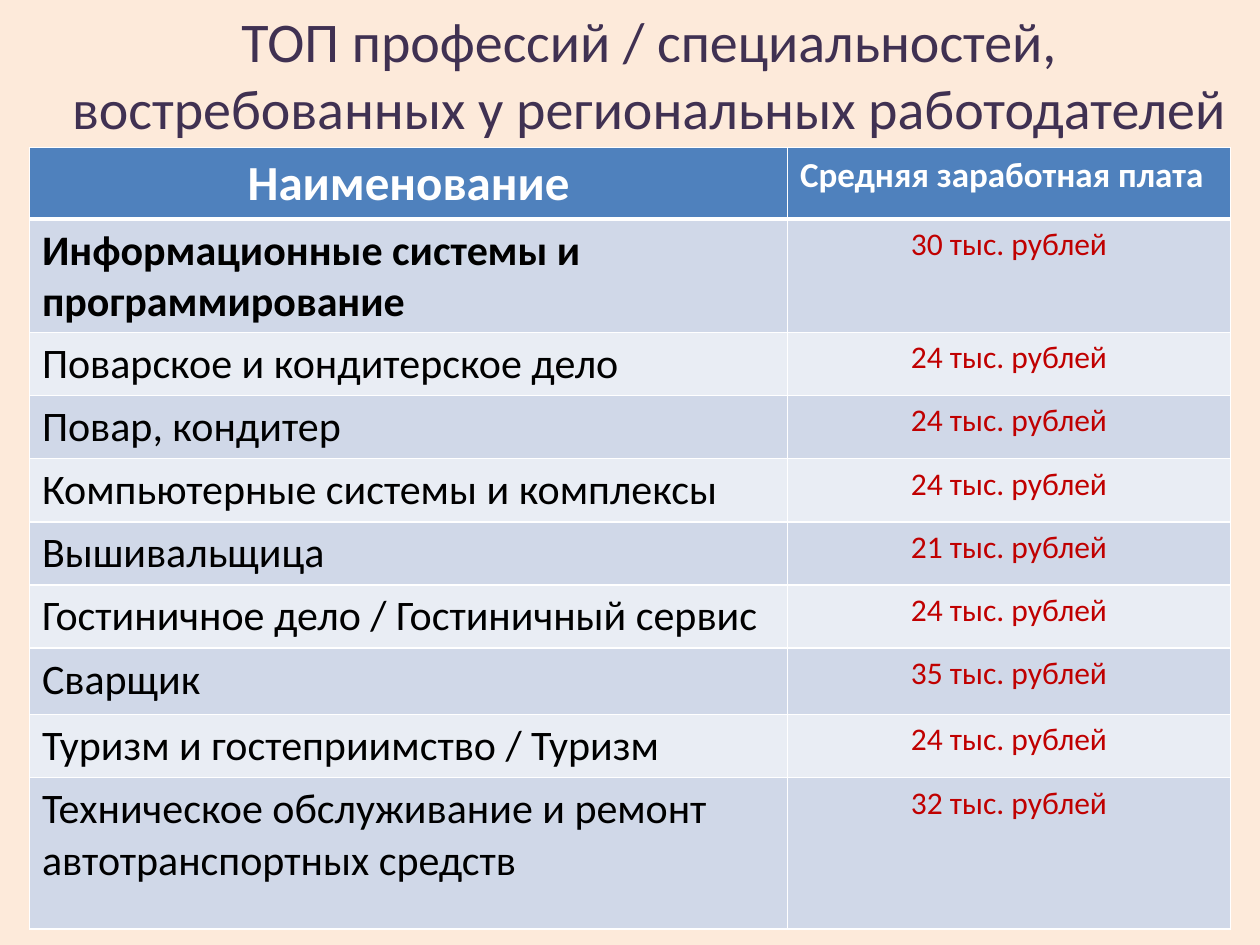
from lxml.etree import SubElement
from pptx import Presentation
from pptx.dml.color import RGBColor
from pptx.enum.text import MSO_ANCHOR, MSO_AUTO_SIZE, PP_ALIGN
from pptx.oxml.ns import qn
from pptx.util import Pt

# Content
TITLE = "ТОП профессий / специальностей, востребованных у региональных работодателей"
HEADERS = ("Наименование", "Средняя заработная плата")
# Profession, salary in thousands of roubles, row height
PROFESSIONS = [
    ("Информационные системы и программирование", 30, 62),
    ("Поварское и кондитерское дело", 24, 34.6),
    ("Повар, кондитер", 24, 34.6),
    ("Компьютерные системы и комплексы", 24, 34.6),
    ("Вышивальщица", 21, 35),
    ("Гостиничное дело / Гостиничный сервис", 24, 34.6),
    ("Сварщик", 35, 38.2),
    ("Туризм и гостеприимство / Туризм", 24, 34.6),
    ("Техническое обслуживание и ремонт автотранспортных средств", 32, 86.4),
]

# Layout and colours
HEADER_HEIGHT = 27.4
COLUMN_WIDTHS = (433.2, 253.2)
TABLE_LEFT, TABLE_TOP, TABLE_HEIGHT = 16.8, 84.4, 446.4
BAND_FILLS = ("D0D8E8", "E9EDF4")
HEADER_FILL = "4F81BD"
WHITE = "FFFFFF"


def color(hex_value):
    return RGBColor.from_string(hex_value)


def write(frame, text, size, hex_value, bold=False, align=PP_ALIGN.LEFT):
    paragraph = frame.paragraphs[0]
    paragraph.alignment = align
    run = paragraph.add_run()
    run.text = text
    run.font.name = "Calibri"
    run.font.size = Pt(size)
    run.font.bold = bold
    run.font.color.rgb = color(hex_value)


def format_cell(cell, fill, top=1, bottom=1):
    properties = cell._tc.get_or_add_tcPr()
    for tag, width in (("lnL", 1), ("lnR", 1), ("lnT", top), ("lnB", bottom)):
        line = SubElement(properties, qn(f"a:{tag}"), w=str(Pt(width)))
        solid = SubElement(line, qn("a:solidFill"))
        SubElement(solid, qn("a:srgbClr"), val=WHITE)
    cell.fill.solid()
    cell.fill.fore_color.rgb = color(fill)


# Slide and background
presentation = Presentation()
presentation.slide_width, presentation.slide_height = Pt(720), Pt(540)
slide = presentation.slides.add_slide(presentation.slide_layouts[5])
slide.background.fill.solid()
slide.background.fill.fore_color.rgb = color("FDEADA")

# Title
title = slide.shapes.title
title.left, title.top, title.width, title.height = Pt(22.3), Pt(0), Pt(697.7), Pt(85)
title.text_frame.word_wrap = True
title.text_frame.auto_size = MSO_AUTO_SIZE.SHAPE_TO_FIT_TEXT
title.text_frame.vertical_anchor = MSO_ANCHOR.TOP
write(title.text_frame, TITLE, 32, "403152", align=PP_ALIGN.CENTER)

# Table grid
table_shape = slide.shapes.add_table(
    len(PROFESSIONS) + 1, len(HEADERS), Pt(TABLE_LEFT), Pt(TABLE_TOP),
    Pt(sum(COLUMN_WIDTHS)), Pt(TABLE_HEIGHT))
table = table_shape.table
for column, width in zip(table.columns, COLUMN_WIDTHS):
    column.width = Pt(width)
row_heights = [HEADER_HEIGHT] + [height for _, _, height in PROFESSIONS]
for row, height in zip(table.rows, row_heights):
    row.height = Pt(height)
table_shape.height = Pt(TABLE_HEIGHT)

# Header row
header_formats = ((28, PP_ALIGN.CENTER), (20, PP_ALIGN.LEFT))
for index, (text, (size, align)) in enumerate(zip(HEADERS, header_formats)):
    cell = table.cell(0, index)
    format_cell(cell, HEADER_FILL, bottom=3)
    write(cell.text_frame, text, size, WHITE, bold=True, align=align)

# Professions: banded rows, the first name in bold
for index, (name, salary, _) in enumerate(PROFESSIONS):
    name_cell, salary_cell = table.rows[index + 1].cells
    for cell in (name_cell, salary_cell):
        format_cell(cell, BAND_FILLS[index % 2], top=3 if index == 0 else 1)
    write(name_cell.text_frame, name, 24, "000000", bold=index == 0)
    write(salary_cell.text_frame, f"{salary} тыс. рублей", 18, "C00000",
          align=PP_ALIGN.CENTER)

presentation.save("out.pptx")
